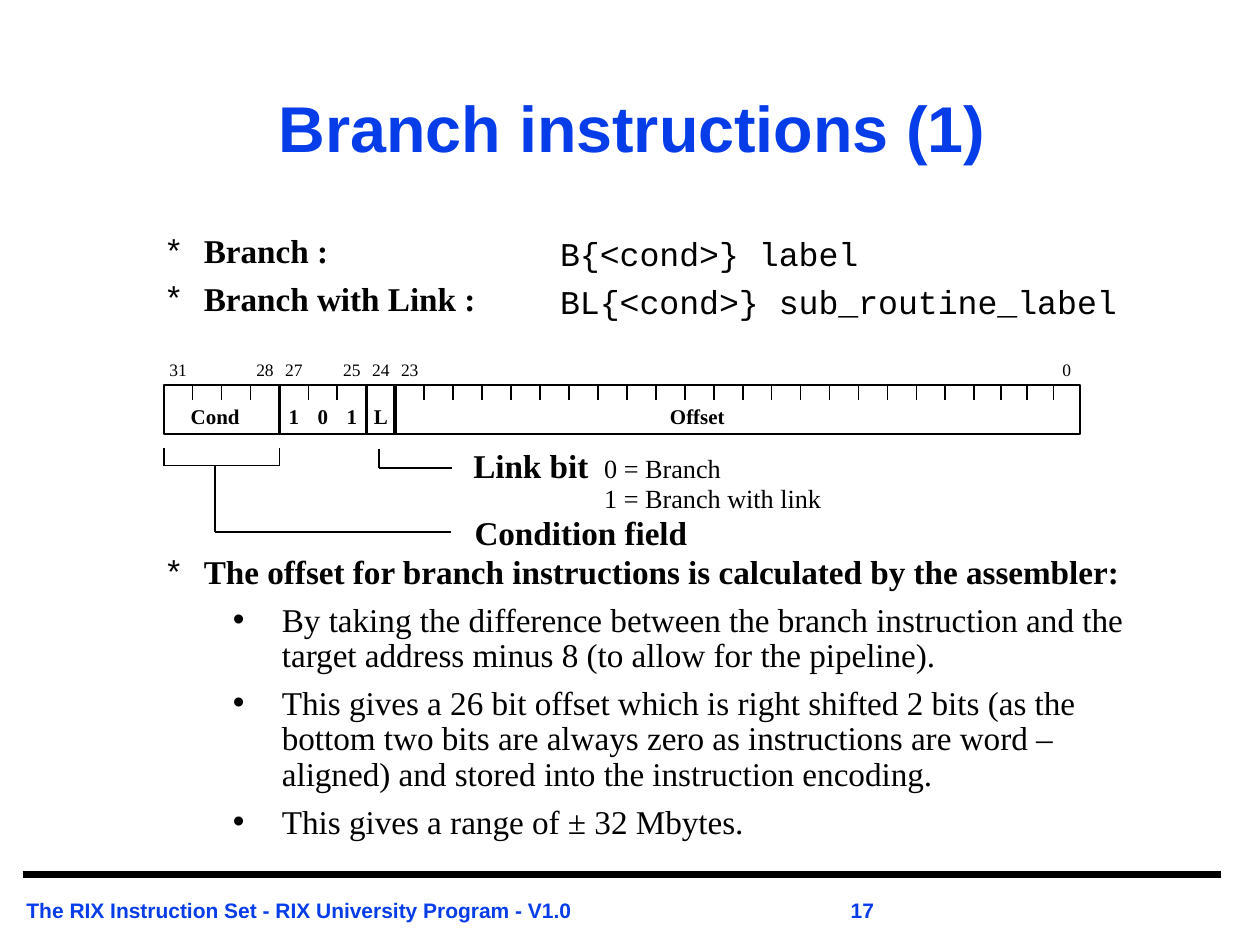
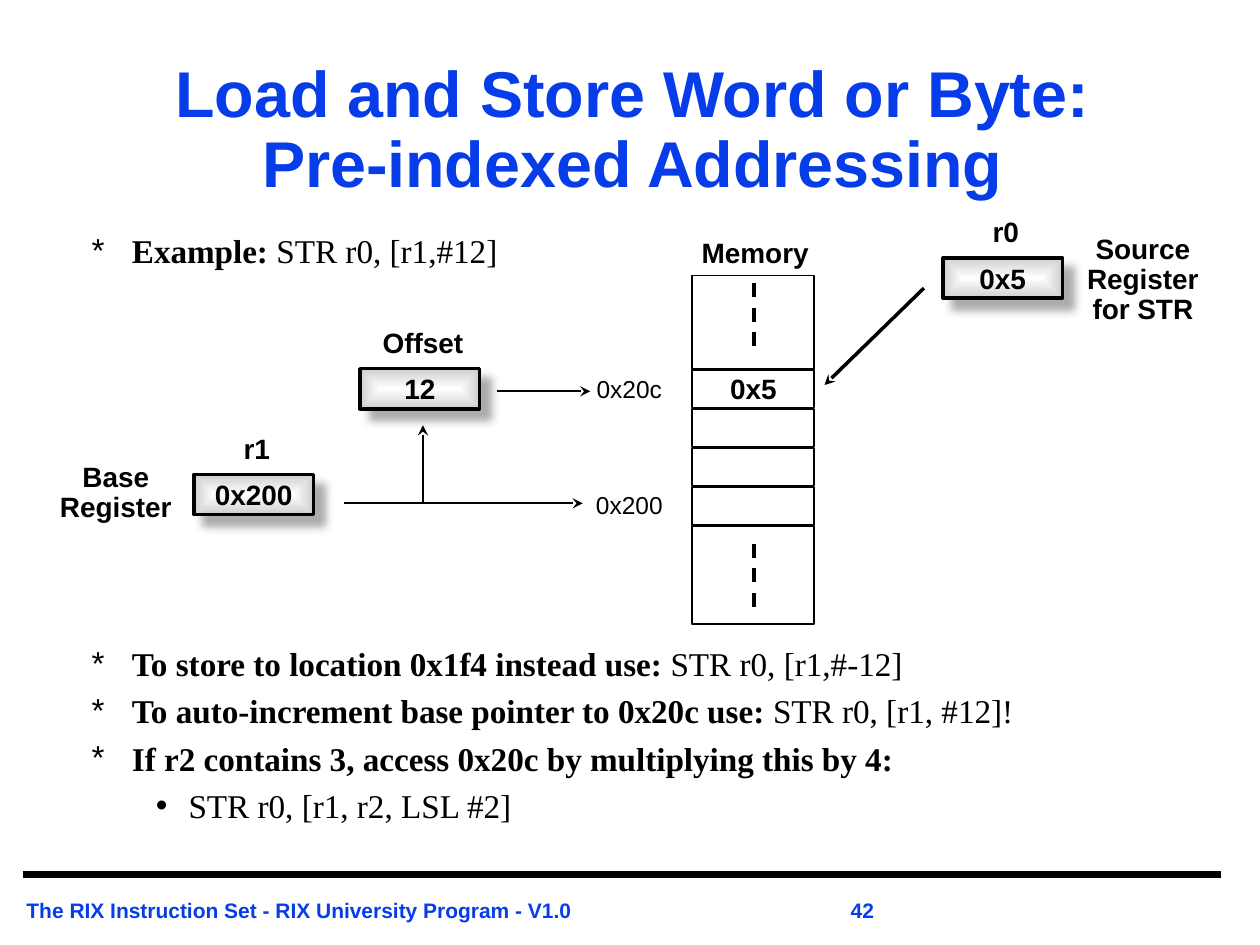
from itertools import pairwise
from pptx import Presentation
from pptx.dml.color import RGBColor
from pptx.enum.dml import MSO_LINE
from pptx.enum.shapes import MSO_CONNECTOR as CON, MSO_SHAPE as SHAPE
from pptx.enum.text import MSO_ANCHOR as ANCHOR, PP_ALIGN as ALIGN
from pptx.oxml import parse_xml
from pptx.oxml.ns import qn
from pptx.util import Inches, Pt

BLUE, BLACK = "063DE8", "000000"
SANS, SERIF, MONO = "Arial", "Times New Roman", "Courier New"
NS = 'xmlns:a="http://schemas.openxmlformats.org/drawingml/2006/main"'
FOOT = "The RIX Instruction Set - RIX University Program - V1.0"
GRAD = f'''<a:gradFill {NS} rotWithShape="0"><a:gsLst>
<a:gs pos="0"><a:srgbClr val="FFFFFF"/></a:gs>
<a:gs pos="100000"><a:srgbClr val="CECECE"/></a:gs></a:gsLst>
<a:path path="shape"><a:fillToRect l="50000" t="50000" r="50000" b="50000"/></a:path>
</a:gradFill>'''
SHADOW = f'''<a:outerShdw {NS} blurRad="{Pt(5)}" dist="{Pt(8.5)}" dir="2700000"
algn="ctr" rotWithShape="0"><a:srgbClr val="919191"><a:alpha val="75000"/></a:srgbClr>
</a:outerShdw>'''


def color(code):
    return RGBColor.from_string(code)


def style(run, size, font=SERIF, bold=False, tint=BLACK):
    run.font.size = Pt(size)
    run.font.name = font
    run.font.bold = bold
    run.font.color.rgb = color(tint)


def fill_in(para, parts, size, font, tint):
    for words, bold, *own in parts:
        run = para.add_run()
        run.text = words
        style(run, own[0] if own else size, font, bold, tint)


def add_tab(para, at, side):
    para._p.get_or_add_pPr().append(parse_xml(
        f'<a:tabLst {NS}><a:tab pos="{Inches(at)}" algn="{side}"/></a:tabLst>'))


def text(slide, box, paras, size, font=SERIF, tint=BLACK, align=ALIGN.LEFT,
         space=0.9, gap=0, inset=(0.07, 0.03), anchor=ANCHOR.TOP, tab=None, steps=None):
    frame = slide.shapes.add_textbox(*map(Inches, box)).text_frame
    frame.word_wrap = True
    frame.vertical_anchor = anchor
    frame.margin_left = frame.margin_right = Inches(inset[0])
    frame.margin_top = frame.margin_bottom = Inches(inset[1])
    for i, parts in enumerate(paras):
        para = frame.paragraphs[0] if i == 0 else frame.add_paragraph()
        para.alignment = align
        para.line_spacing = space
        if i and gap:
            para.space_before = Pt(gap)
        if tab:
            add_tab(para, *tab)
        if steps:
            add_bullet(para, *steps[i])
        fill_in(para, parts, size, font, tint)


def add_bullet(para, mark, left, hang):
    props = para._p.get_or_add_pPr()
    props.set("marL", str(Inches(left)))
    props.set("indent", str(-Inches(hang)))
    props.append(parse_xml(f'<a:buFont {NS} typeface="{SANS}"/>'))
    props.append(parse_xml(f'<a:buChar {NS} char="{mark}"/>'))


def label(slide, mid, top, words, size, font=SANS, bold=True, width=1.17):
    lines = words.split("\n")
    box = (mid - width / 2, top, width, 0.1 + len(lines) * size / 66)
    text(slide, box, [[(s, bold)] for s in lines], size, font,
         align=ALIGN.CENTER, inset=(0, 0.05))


def bullets(slide, box, paras, top, sub, inset=(0.07, 0.03)):
    steps = [("•", *sub) if deep else ("*", *top) for deep, _ in paras]
    text(slide, box, [parts for _, parts in paras], 19, gap=6.5, inset=inset, steps=steps)


def line(slide, start, end, width=1, arrow=False, dash=False):
    link = slide.shapes.add_connector(CON.STRAIGHT, *map(Inches, (*start, *end)))
    link.line.color.rgb = color(BLACK)
    link.line.width = Pt(width)
    if dash:
        link.line.dash_style = MSO_LINE.DASH
    if arrow:
        link.line._get_or_add_ln().append(parse_xml(f'<a:tailEnd {NS} type="stealth"/>'))
    link._element.spPr.append(parse_xml(f"<a:effectLst {NS}/>"))


def trail(slide, x, y, points):
    for a, b in pairwise(points):
        line(slide, (x + a[0], y + a[1]), (x + b[0], y + b[1]))


def block(slide, box, words="", width=1):
    rect = slide.shapes.add_shape(SHAPE.RECTANGLE, *map(Inches, box))
    rect.shadow.inherit = False
    rect.fill.background()
    rect.line.color.rgb = color(BLACK)
    rect.line.width = Pt(width)
    if words:
        frame = rect.text_frame
        frame.margin_top = frame.margin_bottom = 0
        frame.vertical_anchor = ANCHOR.MIDDLE
        frame.text = words
        frame.paragraphs[0].alignment = ALIGN.CENTER
        style(frame.paragraphs[0].runs[0], 16, SANS, True)
    return rect


def base(deck, title, page):
    slide = deck.slides.add_slide(deck.slide_layouts[6])
    line(slide, (0.18, 6.95), (9.7, 6.95), 3.75)
    text(slide, (0.14, 7.07, 9.85, 0.29), [[(f"{FOOT}\t{page}", True)]], 12, SANS, BLUE,
         space=1.18, tab=(6.64, "ctr"))
    text(slide, (1.06, 0.4, 7.93, 1.29), [[(s, True)] for s in title.split("\n")], 37,
         SANS, BLUE, ALIGN.CENTER, inset=(0.1, 0.05), anchor=ANCHOR.MIDDLE)
    return slide


def encoding(slide, x, y):
    def edge(i):
        return x + 0.23 * i - 0.02 * max(0, i - 28)

    def middle(bit):
        return (edge(31 - bit) + edge(32 - bit)) / 2

    block(slide, (x, y, edge(32) - x, 0.39))
    for i in range(1, 32):
        wall = i in (4, 7, 8)
        line(slide, (edge(i), y), (edge(i), y + (0.39 if wall else 0.12)), 2 if wall else 1)
    for bit in (31, 28, 27, 25, 24, 23, 0):
        label(slide, middle(bit), y - 0.24, str(bit), 10, SERIF, False, 0.3)
    for mid, words in ((x + 0.41, "Cond"), (middle(27), "1"), (middle(26), "0"),
                       (middle(25), "1"), (middle(24), "L"), (x + 4.24, "Offset")):
        label(slide, mid, y + 0.12, words, 12, SERIF, True, 0.8)
    trail(slide, x, y, [(0, 0.5), (0, 0.64), (0.92, 0.64), (0.92, 0.5)])
    trail(slide, x, y, [(0.41, 0.64), (0.41, 1.17), (2.28, 1.17)])
    trail(slide, x, y, [(1.71, 0.51), (1.71, 0.66), (2.29, 0.66)])
    text(slide, (x + 2.39, y + 0.49, 3.2, 0.56),
         [[("Link bit\t", True, 19), ("0 = Branch", False)],
          [("\t1 = Branch with link", False)]], 15, space=0.89, tab=(1.04, "l"))
    text(slide, (x + 2.4, y + 1.02, 2.2, 0.34), [[("Condition field", True)]], 19)


def register(slide, x, y, name, value):
    rect = block(slide, (x, y, 0.95, 0.32), value, 2)
    props = rect._element.spPr
    props.replace(props.find(qn("a:noFill")), parse_xml(GRAD))
    props.find(qn("a:effectLst")).append(parse_xml(SHADOW))
    label(slide, x + 0.5, y - 0.36, name, 16)


def memory(slide, x, y):
    label(slide, x + 0.5, y - 0.34, "Memory", 16)
    top = y
    for high, words in ((0.74, ""), (0.3, "0x5"), (0.3, ""), (0.3, ""), (0.3, ""), (0.78, "")):
        block(slide, (x, top, 0.97, high), words)
        top += high + 0.01
    for drop in (0.06, 2.13):
        line(slide, (x + 0.49, y + drop), (x + 0.49, y + drop + 0.58), 2, dash=True)


def branch(deck):
    slide = base(deck, "Branch instructions (1)", 17)
    top, sub = (0.29, 0.29), (0.91, 0.39)
    bullets(slide, (1.26, 1.84, 3.1, 0.7),
            [(0, [("Branch :", True)]), (0, [("Branch with Link :", True)])], top, sub)
    text(slide, (4.38, 1.86, 5, 0.7),
         [[("B{<cond>} label", False)], [("BL{<cond>} sub_routine_label", False)]],
         19, MONO, gap=6.8)
    encoding(slide, 1.3, 3.06)
    bullets(slide, (1.26, 4.39, 7.94, 2.4), [
        (0, [("The offset for branch instructions is calculated by the assembler:", True)]),
        (1, [("By taking the difference between the branch instruction and the target "
              "address minus 8 (to allow for the pipeline).", False)]),
        (1, [("This gives a 26 bit offset which is right shifted 2 bits (as the bottom two "
              "bits are always zero as instructions are word – aligned) and stored into the "
              "instruction encoding.", False)]),
        (1, [("This gives a range of ± 32 Mbytes.", False)])], top, sub)


def indexed(deck):
    slide = base(deck, "Load and Store Word or Byte:\nPre-indexed Addressing", 42)
    look = ((0.32, 0.32), (0.77, 0.26), (0.1, 0.05))
    bullets(slide, (0.63, 1.82, 4.5, 0.4),
            [(0, [("Example: ", True), ("STR r0, [r1,#12]", False)])], *look)
    bullets(slide, (0.63, 5.1, 8.77, 1.6), [
        (0, [("To store to location 0x1f4 instead use: ", True), ("STR r0, [r1,#-12]", False)]),
        (0, [("To auto-increment base pointer to 0x20c use: ", True),
             ("STR r0, [r1, #12]!", False)]),
        (0, [("If r2 contains 3, access 0x20c by multiplying this by 4:", True)]),
        (1, [("STR r0, [r1, r2, LSL #2]", False)])], *look)
    memory(slide, 5.5, 2.19)
    for x, y, name, value in ((1.54, 3.77, "r1", "0x200"), (2.86, 2.93, "Offset", "12"),
                              (7.49, 2.05, "r0", "0x5")):
        register(slide, x, y, name, value)
    label(slide, 0.92, 3.63, "Base\nRegister", 16)
    label(slide, 9.08, 1.82, "Source\nRegister\nfor STR", 16)
    label(slide, 5, 2.95, "0x20c", 14, bold=False)
    label(slide, 5, 3.87, "0x200", 14, bold=False)
    for start, end, width in (((2.73, 4), (4.63, 4), 1), ((3.36, 4), (3.36, 3.38), 1),
                              ((3.95, 3.11), (4.69, 3.11), 1), ((7.34, 2.29), (6.55, 3.06), 2)):
        line(slide, start, end, width, arrow=True)


def main():
    deck = Presentation()
    deck.slide_width, deck.slide_height = Inches(10.01), Inches(7.51)
    branch(deck)
    indexed(deck)
    deck.save("out.pptx")


if __name__ == "__main__":
    main()
